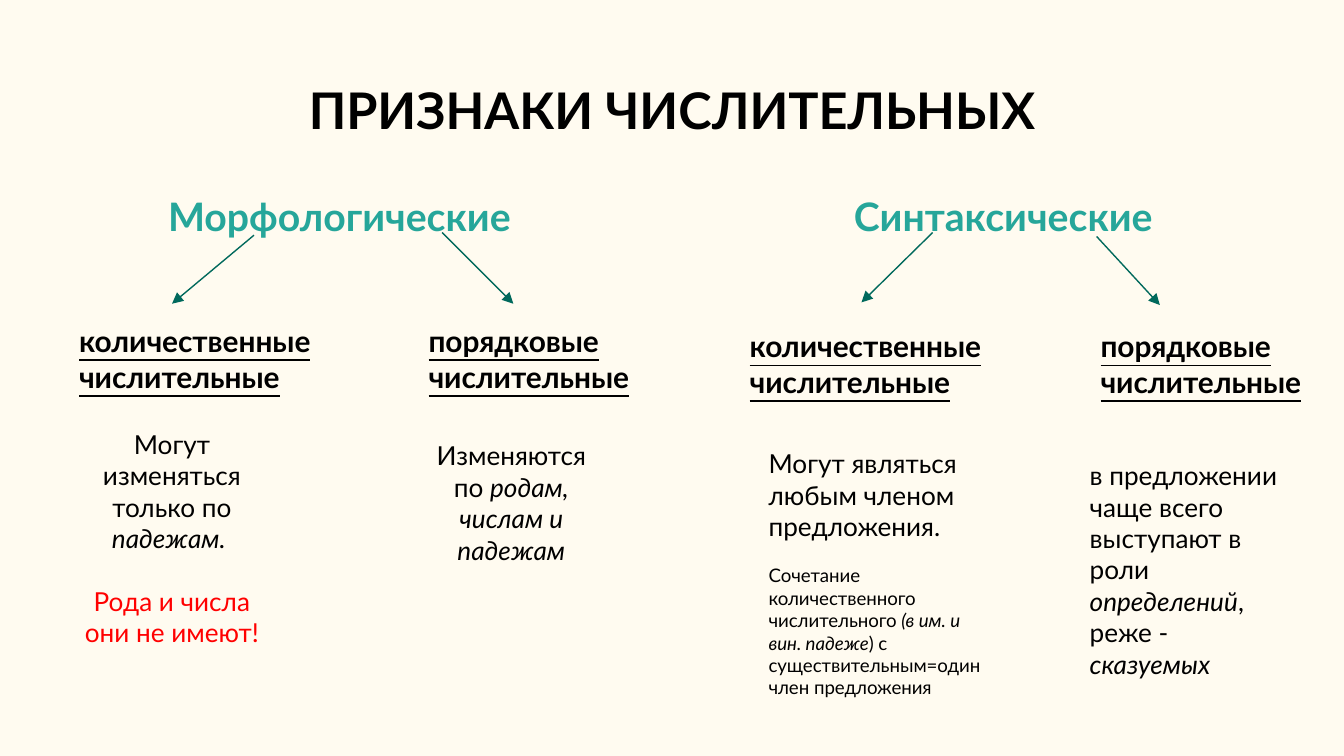
"""Builds a slide on the morphological and syntactic features of numerals."""
from dataclasses import dataclass

from lxml import etree
from pptx import Presentation
from pptx.dml.color import RGBColor
from pptx.enum.shapes import MSO_CONNECTOR
from pptx.enum.text import MSO_ANCHOR, MSO_AUTO_SIZE, PP_ALIGN
from pptx.oxml.ns import qn
from pptx.util import Inches, Pt

STRAIGHT = MSO_CONNECTOR.STRAIGHT
TOP, MIDDLE = MSO_ANCHOR.TOP, MSO_ANCHOR.MIDDLE
LEFT, CENTER = PP_ALIGN.LEFT, PP_ALIGN.CENTER
NO_FIT = MSO_AUTO_SIZE.NONE

FONT = "Lato"
CREAM, BLACK, RED = "FFFBF0", "000000", "FF0000"
TEAL, DARK_TEAL = "26A69A", "00695C"


@dataclass(frozen=True)
class Span:
    """A stretch of text with one format."""
    text: str
    size: float = 14
    color: str = BLACK
    bold: bool = False
    italic: bool = False
    underline: bool = False


@dataclass(frozen=True)
class Para:
    """A paragraph made of spans."""
    spans: tuple[Span, ...]
    space_before: float = 0
    line_spacing: float = 1.0


@dataclass(frozen=True)
class Block:
    """A placed block of text, in inches."""
    left: float
    top: float
    width: float
    height: float
    paras: tuple[Para, ...]
    align: PP_ALIGN = LEFT
    anchor: MSO_ANCHOR = TOP


@dataclass(frozen=True)
class Arrow:
    """An arrow between two points, in inches."""
    start: tuple[float, float]
    end: tuple[float, float]


def rgb(color: str) -> RGBColor:
    """Turn a hex string into a colour."""
    return RGBColor.from_string(color)


def fill_block(box, block: Block) -> None:
    """Place a box and write its formatted text."""
    box.left, box.top = Inches(block.left), Inches(block.top)
    box.width, box.height = Inches(block.width), Inches(block.height)
    frame = box.text_frame
    frame.word_wrap = True
    frame.auto_size = NO_FIT
    frame.vertical_anchor = block.anchor
    frame.margin_left = frame.margin_right = Inches(0.1)
    frame.margin_top = frame.margin_bottom = Inches(0.1)
    for index, para in enumerate(block.paras):
        paragraph = frame.add_paragraph() if index else frame.paragraphs[0]
        paragraph.alignment = block.align
        paragraph.space_before = Pt(para.space_before)
        paragraph.line_spacing = para.line_spacing
        for span in para.spans:
            run = paragraph.add_run()
            run.text = span.text
            font = run.font
            font.name, font.size = FONT, Pt(span.size)
            font.bold, font.italic = span.bold, span.italic
            font.underline = span.underline
            font.color.rgb = rgb(span.color)


def add_block(page, block: Block) -> None:
    """Add a text box for a block."""
    fill_block(page.shapes.add_textbox(0, 0, 0, 0), block)


def add_arrow(page, arrow: Arrow) -> None:
    """Add a thin arrow without a shadow."""
    points = [Inches(value) for value in arrow.start + arrow.end]
    connector = page.shapes.add_connector(STRAIGHT, *points)
    connector.line.color.rgb = rgb(DARK_TEAL)
    connector.line.width = Pt(0.75)
    properties = connector._element.spPr
    etree.SubElement(properties.find(qn("a:ln")), qn("a:tailEnd"), type="triangle")
    etree.SubElement(properties, qn("a:effectLst"))


def heading(text: str, left: float) -> Block:
    """Describe the heading of one half of the slide."""
    para = Para((Span(text, 21, TEAL, bold=True),), line_spacing=1.15)
    return Block(left, 1.28, 4.37, 3.72, (para,), CENTER)


def subheading(text: str, left: float, top: float, width: float) -> Block:
    """Describe the underlined name of a kind of numeral."""
    span = Span(text, 16, bold=True, underline=True)
    return Block(left, top, width, 0.74, (Para((span,)),))


CARDINAL, ORDINAL = "количественные числительные", "порядковые числительные"

TITLE = Block(0.34, 0.49, 9.32, 0.67, (
    Para((Span("ПРИЗНАКИ ЧИСЛИТЕЛЬНЫХ", 27, bold=True),)),
), CENTER)

BLOCKS = (
    heading("Морфологические", 0.34),
    heading("Синтаксические", 5.28),
    subheading(CARDINAL, 0.49, 2.3, 2.04),
    subheading(ORDINAL, 3.09, 2.3, 1.78),
    subheading(CARDINAL, 5.48, 2.34, 2.04),
    subheading(ORDINAL, 8.09, 2.34, 1.78),
    Block(0.46, 3.08, 1.64, 1.85, (
        Para((Span("Могут изменяться только по "), Span("падежам. ", italic=True))),
        Para((Span("Рода и числа они не имеют!", color=RED),), space_before=16.8),
    ), CENTER, MIDDLE),
    Block(3.08, 3.17, 1.45, 1.14, (
        Para((Span("Изменяются по "), Span("родам, числам и падежам", italic=True))),
    ), CENTER, MIDDLE),
    Block(5.62, 3.23, 1.89, 2.32, (
        Para((Span("Могут являться любым членом предложения."),)),
        Para((
            Span("Сочетание количественного числительного ", 10),
            Span("(в им. и вин. падеже", 10, italic=True),
            Span(") с существительным=один член предложения", 10),
        ), space_before=12),
    )),
    Block(8.01, 3.32, 1.64, 1.85, (
        Para((
            Span("в предложении чаще всего выступают в роли "),
            Span("определений", italic=True),
            Span(", реже - "),
            Span("сказуемых", italic=True),
        )),
    )),
)

ARROWS = (
    Arrow((1.89, 1.75), (1.28, 2.26)),
    Arrow((3.29, 1.73), (3.82, 2.26)),
    Arrow((6.94, 1.73), (6.41, 2.25)),
    Arrow((8.16, 1.76), (8.63, 2.27)),
)


def main() -> None:
    """Build and save the deck."""
    deck = Presentation()
    deck.slide_width, deck.slide_height = Inches(10), Inches(10 * 9 / 16)
    page = deck.slides.add_slide(deck.slide_layouts.get_by_name("Title Only"))
    page.background.fill.solid()
    page.background.fill.fore_color.rgb = rgb(CREAM)
    fill_block(page.shapes.title, TITLE)
    for block in BLOCKS:
        add_block(page, block)
    for arrow in ARROWS:
        add_arrow(page, arrow)
    deck.save("out.pptx")


if __name__ == "__main__":
    main()
